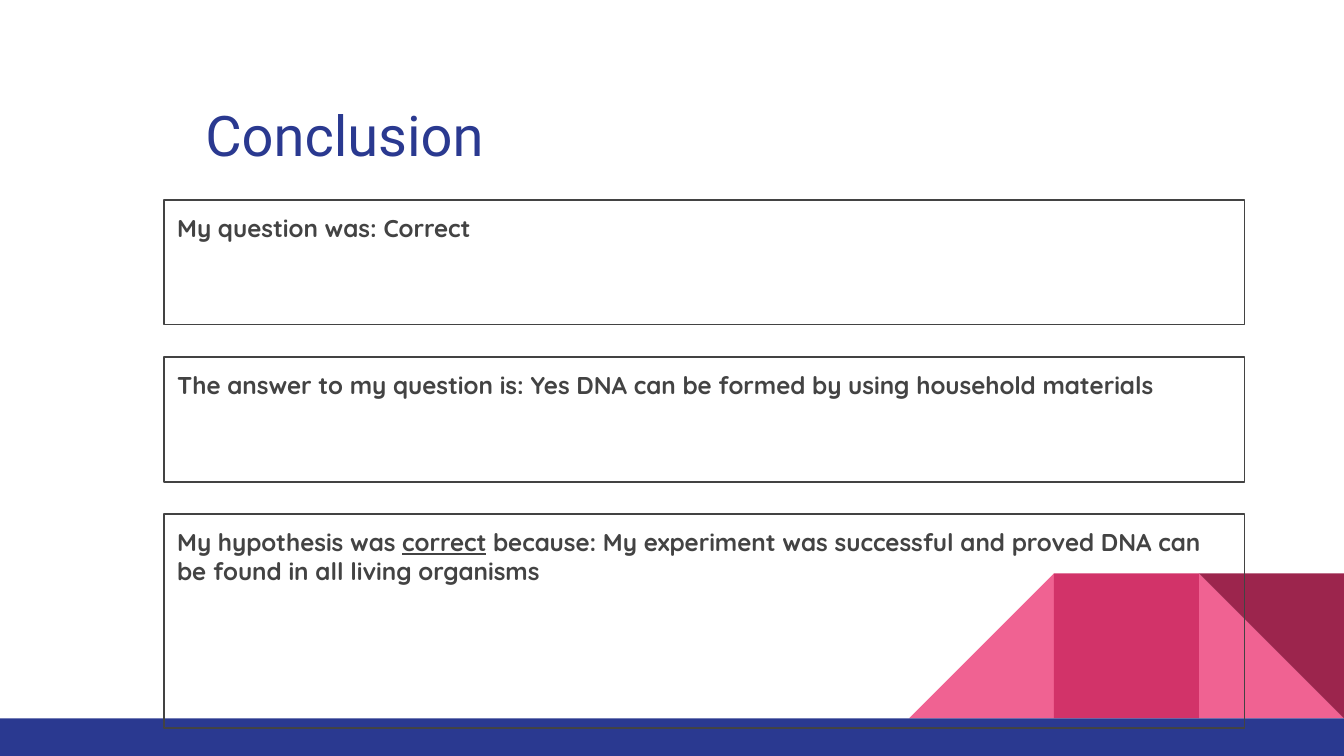
from dataclasses import dataclass

from pptx import Presentation
from pptx.dml.color import RGBColor
from pptx.enum.shapes import MSO_SHAPE
from pptx.enum.text import MSO_ANCHOR, PP_ALIGN
from pptx.util import Cm, Pt


@dataclass(frozen=True)
class Theme:
    navy: RGBColor = RGBColor.from_string("2A3990")
    grey: RGBColor = RGBColor.from_string("434343")
    light_pink: RGBColor = RGBColor.from_string("F06292")
    pink: RGBColor = RGBColor.from_string("D23369")
    dark_pink: RGBColor = RGBColor.from_string("9C254D")
    title_font: str = "Roboto"
    body_font: str = "Quicksand"
    title_size: Pt = Pt(30)
    body_size: Pt = Pt(13)
    outline: Pt = Pt(0.75)


THEME = Theme()
SLIDE_WIDTH, SLIDE_HEIGHT = 25.4, 14.29
FOOTER_TOP = 13.58
TILE = 2.74
ANSWER_LEFT, ANSWER_TOP, ANSWER_WIDTH, ANSWER_GAP = 3.1, 3.78, 20.42, 0.61

# Each answer: box height and its runs as (text, underlined)
ANSWERS = [
    (2.36, [("My question was: Correct", False)]),
    (2.36, [("The answer to my question is: Yes DNA can be formed by using "
             "household materials", False)]),
    (4.04, [("My hypothesis was ", False),
            ("correct", True),
            (" because: My experiment was successful and proved DNA can be "
             "found in all living organisms", False)]),
]


def add_filled(slide, preset, left, top, width, height, color, rotation=0):
    shape = slide.shapes.add_shape(preset, Cm(left), Cm(top), Cm(width), Cm(height))
    shape.shadow.inherit = False
    shape.fill.solid()
    shape.fill.fore_color.rgb = color
    shape.line.fill.background()
    shape.rotation = rotation


def add_decoration(slide):
    """Add the pink tiles in the bottom right corner and the footer bar."""
    triangle, square = MSO_SHAPE.RIGHT_TRIANGLE, MSO_SHAPE.RECTANGLE
    tiles = [  # preset, tiles from the right edge, colour, rotation
        (triangle, 1, THEME.light_pink, 0),
        (triangle, 3, THEME.light_pink, 270),
        (square, 2, THEME.pink, 0),
        (triangle, 1, THEME.dark_pink, 180),
    ]
    for preset, steps, color, rotation in tiles:
        add_filled(slide, preset, SLIDE_WIDTH - steps * TILE, FOOTER_TOP - TILE,
                   TILE, TILE, color, rotation)
    add_filled(slide, square, 0, FOOTER_TOP, SLIDE_WIDTH,
               SLIDE_HEIGHT - FOOTER_TOP, THEME.navy)


def prepare_text(frame):
    """Set margins, wrapping and top alignment; return the first paragraph."""
    frame.margin_left = frame.margin_right = Cm(0.25)
    frame.margin_top = frame.margin_bottom = Cm(0.25)
    frame.word_wrap = True
    frame.vertical_anchor = MSO_ANCHOR.TOP
    paragraph = frame.paragraphs[0]
    paragraph.alignment = PP_ALIGN.LEFT
    return paragraph


def add_run(paragraph, text, font_name, size, color, bold=False, underline=False):
    run = paragraph.add_run()
    run.text = text
    font = run.font
    font.name, font.size, font.bold, font.underline = font_name, size, bold, underline
    font.color.rgb = color


def set_title(slide, text):
    title = slide.shapes.title
    title.left, title.top = Cm(3.63), Cm(1.65)
    title.width, title.height = Cm(19.53), Cm(2.06)
    add_run(prepare_text(title.text_frame), text, THEME.title_font,
            THEME.title_size, THEME.navy)


def add_answer(slide, top, height, runs):
    box = slide.shapes.add_shape(MSO_SHAPE.RECTANGLE, Cm(ANSWER_LEFT), Cm(top),
                                 Cm(ANSWER_WIDTH), Cm(height))
    box.shadow.inherit = False
    box.fill.background()
    box.line.color.rgb = THEME.grey
    box.line.width = THEME.outline
    paragraph = prepare_text(box.text_frame)
    for text, underline in runs:
        add_run(paragraph, text, THEME.body_font, THEME.body_size, THEME.grey,
                bold=True, underline=underline)


def main():
    presentation = Presentation()
    presentation.slide_width = Cm(SLIDE_WIDTH)
    presentation.slide_height = Cm(SLIDE_HEIGHT)
    slide = presentation.slides.add_slide(
        presentation.slide_layouts.get_by_name("Title Only"))

    add_decoration(slide)
    set_title(slide, "Conclusion")
    top = ANSWER_TOP
    for height, runs in ANSWERS:
        add_answer(slide, top, height, runs)
        top += height + ANSWER_GAP

    presentation.save("out.pptx")


if __name__ == "__main__":
    main()
